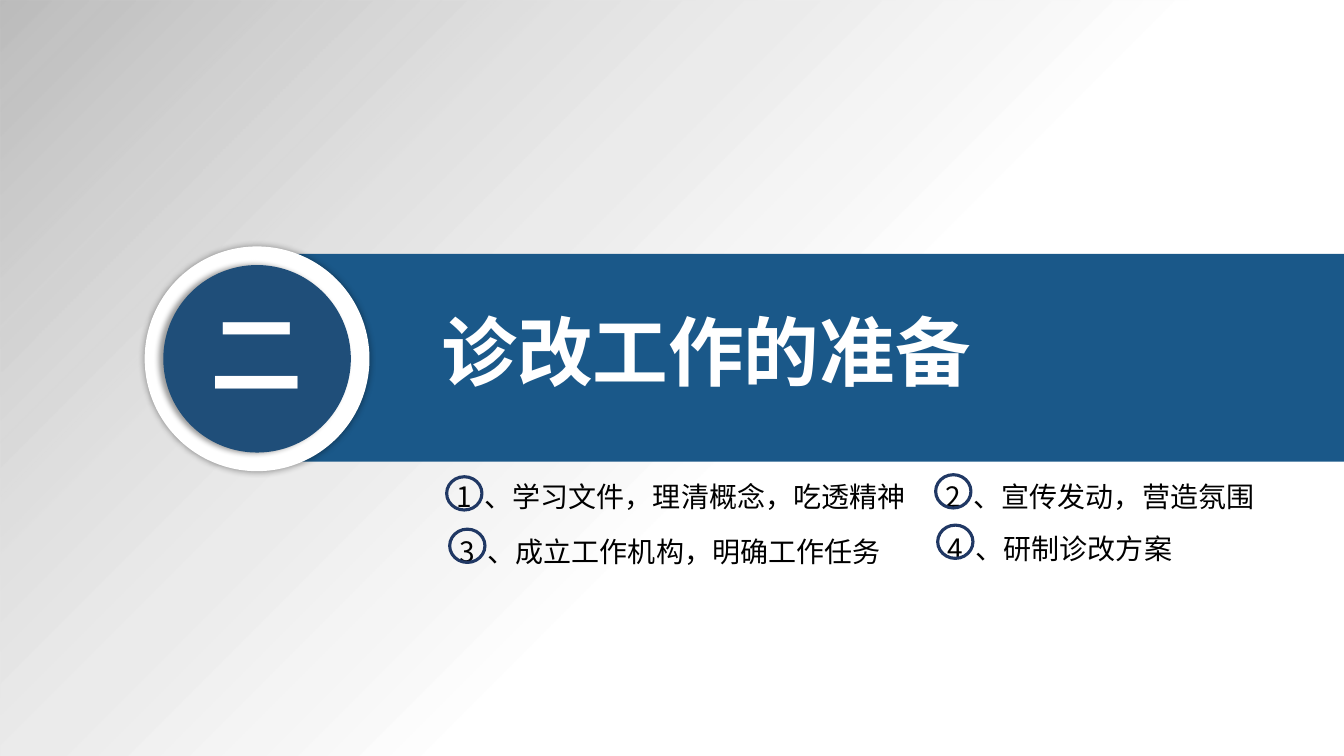
"""Builds the section slide on preparing the diagnosis and improvement work."""
import pptx
import pptx.dml.color
import pptx.enum.shapes
import pptx.enum.text
import pptx.oxml.ns
import pptx.util
from lxml import etree

Inches = pptx.util.Inches
Pt = pptx.util.Pt
RGBColor = pptx.dml.color.RGBColor
SHAPES = pptx.enum.shapes.MSO_SHAPE
qn = pptx.oxml.ns.qn

FONT = "Noto Sans CJK SC"
WHITE = RGBColor(0xFF, 0xFF, 0xFF)
BLACK = RGBColor(0, 0, 0)
BANNER_BLUE = RGBColor(0x1A, 0x58, 0x89)
BADGE_BLUE = RGBColor(0x1F, 0x4E, 0x79)
RING_BLUE = RGBColor(0x20, 0x38, 0x64)

WIDTH, HEIGHT = 13.33, 7.5
SECTION_NUMBER = "二"
SECTION_TITLE = "诊改工作的准备"
STEPS = [
    ("1", "、学习文件，理清概念，吃透精神", 4.43, 4.61, 4.74),
    ("2", "、宣传发动，营造氛围", 9.28, 4.61, 3.55),
    ("3", "、成立工作机构，明确工作任务", 4.46, 5.15, 4.51),
    ("4", "、研制诊改方案", 9.3, 5.12, 3.29),
]
RING_DROPS = {"1": 0.12, "2": 0.1, "3": 0.1, "4": 0.09}
BACKDROP_STOPS = [(0, "A6A6A6", 50), (27, "D6D6D6", 46), (57, "FFFFFF", 45)]
BACKDROP_LAYERS = 2
BADGE_CENTER = (2.55, 3.56)
BADGE_DISCS = [(2.23, WHITE, 5, 0, 0), (1.86, BADGE_BLUE, 4, 3, 180)]


def add_plain(slide, preset, box, color=None):
    shape = slide.shapes.add_shape(preset, *map(Inches, box))
    shape.shadow.inherit = False
    shape.line.fill.background()
    if color is None:
        shape.fill.background()
    else:
        shape.fill.solid()
        shape.fill.fore_color.rgb = color
    return shape


def add_color(parent, value, opacity):
    color = etree.SubElement(parent, qn("a:srgbClr"), val=value)
    etree.SubElement(color, qn("a:alpha"), val=str(opacity * 1000))


def add_backdrop(slide):
    backdrop = add_plain(slide, SHAPES.RECTANGLE, (0, 0, WIDTH, HEIGHT))
    backdrop.fill.gradient()
    backdrop.fill.gradient_angle = 315
    stops = backdrop.element.spPr.find(".//" + qn("a:gsLst"))
    for stop in list(stops):
        stops.remove(stop)
    for position, value, opacity in BACKDROP_STOPS:
        stop = etree.SubElement(stops, qn("a:gs"), pos=str(position * 1000))
        add_color(stop, value, opacity)


def add_disc(slide, size, color, blur, distance, direction):
    x, y = BADGE_CENTER
    box = (x - size / 2, y - size / 2, size, size)
    disc = add_plain(slide, SHAPES.OVAL, box, color)
    effects = disc.element.spPr.find(qn("a:effectLst"))
    shadow = etree.SubElement(
        effects, qn("a:outerShdw"), blurRad=str(Pt(blur)),
        dist=str(Pt(distance)), dir=str(direction * 60000),
        algn="ctr", rotWithShape="0")
    add_color(shadow, "000000", 40)


def add_text(slide, box, pieces, size, color, bold=False, wrap=True):
    frame = slide.shapes.add_textbox(*map(Inches, box)).text_frame
    frame.word_wrap = wrap
    frame.auto_size = pptx.enum.text.MSO_AUTO_SIZE.SHAPE_TO_FIT_TEXT
    paragraph = frame.paragraphs[0]
    for piece in pieces:
        run = paragraph.add_run()
        run.text = piece
        run.font.size = Pt(size)
        run.font.bold = bold
        run.font.color.rgb = color
        run.font.name = FONT
        properties = run.font._element
        etree.SubElement(properties, qn("a:ea"), typeface=FONT)
        if piece == " ":
            properties.set("spc", "450")
    return paragraph


def add_step(slide, number, wording, left, top, width):
    step = add_text(slide, (left, top, width, 0.54),
                    (number, " ", wording), 20, BLACK)
    step.line_spacing = 1.3
    ring = add_plain(slide, SHAPES.OVAL,
                     (left, top + RING_DROPS[number], 0.35, 0.33))
    ring.line.color.rgb = RING_BLUE
    ring.line.width = Pt(2.25)


def main():
    deck = pptx.Presentation()
    deck.slide_width, deck.slide_height = Inches(WIDTH), Inches(HEIGHT)
    slide = deck.slides.add_slide(deck.slide_layouts[6])
    for _ in range(BACKDROP_LAYERS):
        add_backdrop(slide)
    add_plain(slide, SHAPES.RECTANGLE, (2.4, 2.52, WIDTH - 2.4, 2.06), BANNER_BLUE)
    add_text(slide, (4.28, 2.98, 5.5, 1.01), [SECTION_TITLE], 54, WHITE,
             bold=True, wrap=False)
    for disc in BADGE_DISCS:
        add_disc(slide, *disc)
    add_text(slide, (1.99, 2.89, 1.61, 1.21), [SECTION_NUMBER], 66, WHITE, bold=True)
    for step in STEPS:
        add_step(slide, *step)
    deck.save("out.pptx")


if __name__ == "__main__":
    main()
